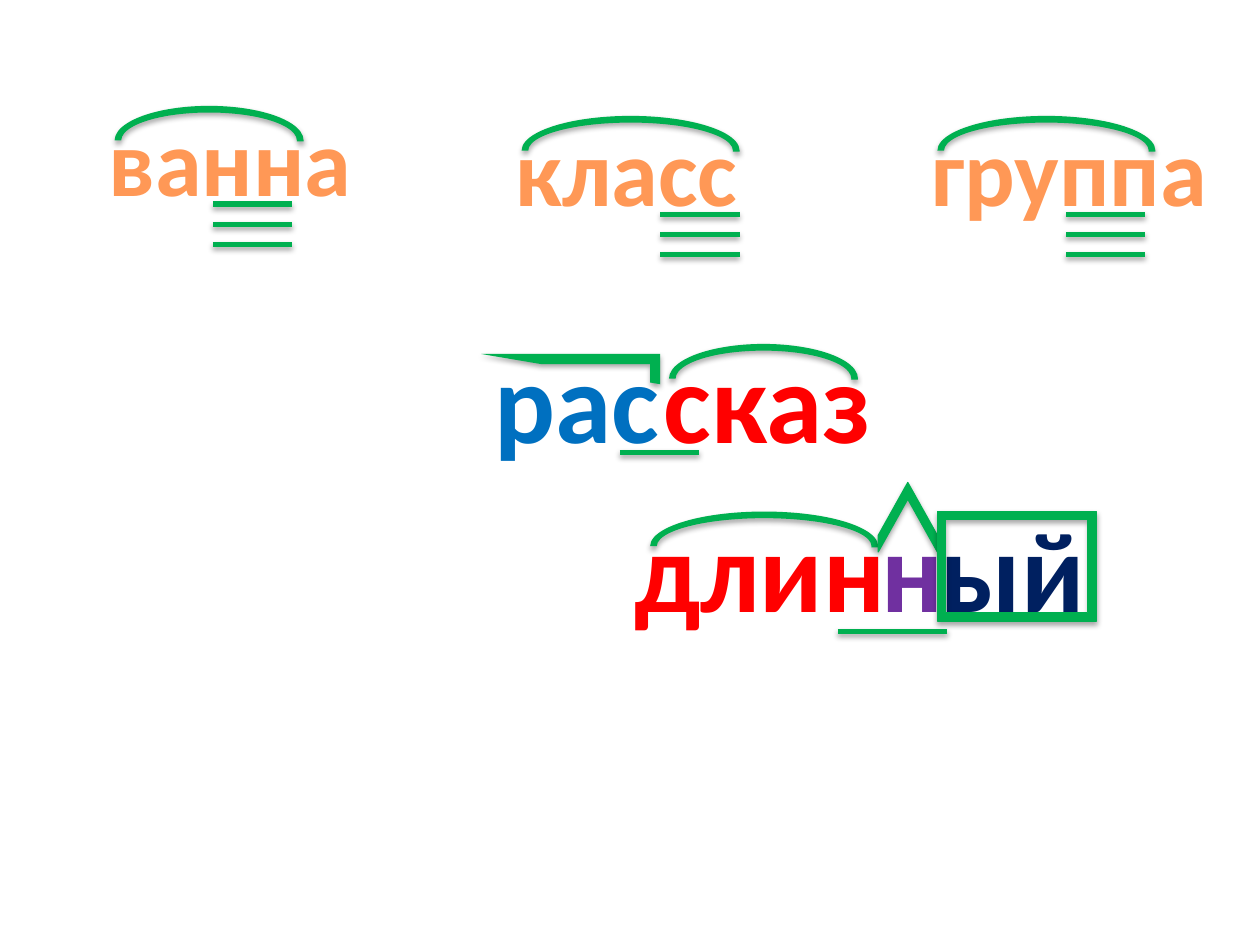
from copy import deepcopy
from dataclasses import dataclass

from lxml.etree import SubElement
from pptx import Presentation
from pptx.dml.color import RGBColor
from pptx.enum.shapes import MSO_CONNECTOR, MSO_SHAPE
from pptx.enum.text import MSO_AUTO_SIZE, PP_ALIGN
from pptx.oxml.ns import qn
from pptx.util import Inches, Pt


@dataclass(frozen=True)
class Theme:
    font: str = "Calibri"
    root_size: int = 54
    parts_size: int = 65
    mark: str = "00B050"
    prefix: str = "0070C0"
    root: str = "FF0000"
    suffix: str = "7030A0"
    ending: str = "002060"
    gradient: tuple = ((0, "9D4700"), (0.78, "FF9856"), (1, "FFF5F1"))
    underline_width: float = 3
    outline_width: float = 0.75


@dataclass(frozen=True)
class Box:
    left: float
    top: float
    width: float
    height: float

    def inner(self, left, top, width, height):
        return Box(self.left + left, self.top + top, width, height)

    def lengths(self):
        return [Inches(value) for value in (self.left, self.top, self.width, self.height)]


THEME = Theme()
ARC_HEIGHT = 0.55
ARC_ADJUSTMENTS = (108, 0.368, 0.096)
UNDERLINE_LENGTH = 0.63
UNDERLINE_STEP = 0.16


def add_shadow(shape):
    effects = SubElement(shape._element.spPr, qn("a:effectLst"))
    shadow = SubElement(effects, qn("a:outerShdw"), blurRad="40000", dist="23000",
                        dir="5400000", rotWithShape="0")
    color = SubElement(shadow, qn("a:srgbClr"), val="000000")
    SubElement(color, qn("a:alpha"), val="35000")


def fill_gradient(font):
    font.fill.gradient()
    font.fill.gradient_angle = 270
    stop_list = font._element.find(qn("a:gradFill")).find(qn("a:gsLst"))
    stop_list.append(deepcopy(stop_list[0]))
    for stop, (position, color) in zip(font.fill.gradient_stops, THEME.gradient):
        stop.position = position
        stop.color.rgb = RGBColor.from_string(color)


def add_word(slide, box, text, size, color=None):
    frame = slide.shapes.add_textbox(*box.lengths()).text_frame
    frame.word_wrap = False
    frame.auto_size = MSO_AUTO_SIZE.SHAPE_TO_FIT_TEXT
    paragraph = frame.paragraphs[0]
    paragraph.alignment = PP_ALIGN.CENTER
    run = paragraph.add_run()
    run.text = text
    for name, value in {"name": THEME.font, "size": Pt(size), "bold": True}.items():
        setattr(run.font, name, value)
    if color:
        run.font.color.rgb = RGBColor.from_string(color)
    else:
        fill_gradient(run.font)


def add_mark(slide, kind, box, adjustments=(), outlined=False, rotation=0, flipped=False):
    shape = slide.shapes.add_shape(kind, *box.lengths())
    for index, value in enumerate(adjustments):
        shape.adjustments[index] = value
    shape.rotation = rotation
    if flipped:
        shape._element.spPr.find(qn("a:xfrm")).set("flipH", "1")
    shape.fill.solid()
    shape.fill.fore_color.rgb = RGBColor.from_string(THEME.mark)
    if outlined:
        shape.line.color.rgb = RGBColor.from_string(THEME.mark)
        shape.line.width = Pt(THEME.outline_width)
    else:
        shape.line.fill.background()
    add_shadow(shape)


def add_root_arc(slide, box):
    add_mark(slide, MSO_SHAPE.BLOCK_ARC, box, ARC_ADJUSTMENTS)


def add_underline(shapes, left, top, length=UNDERLINE_LENGTH):
    line = shapes.add_connector(MSO_CONNECTOR.STRAIGHT, Inches(left), Inches(top),
                                Inches(left + length), Inches(top))
    line.line.color.rgb = RGBColor.from_string(THEME.mark)
    line.line.width = Pt(THEME.underline_width)
    add_shadow(line)


def add_root_word(slide, box, text, arc_width, underline_left):
    add_word(slide, box, text, THEME.root_size)
    add_root_arc(slide, box.inner(0.16, 0.08, arc_width, ARC_HEIGHT))
    group = slide.shapes.add_group_shape()
    for row in range(3):
        add_underline(group.shapes, box.left + underline_left,
                      box.top + 0.86 + row * UNDERLINE_STEP)


def add_prefix_word(slide, box):
    add_word(slide, box.inner(0, 0, 1.52, box.height), "рас", THEME.parts_size, THEME.prefix)
    add_word(slide, box.inner(1.34, 0, 1.86, box.height), "сказ", THEME.parts_size, THEME.root)
    add_root_arc(slide, box.inner(1.49, 0.16, 1.5, ARC_HEIGHT))
    add_mark(slide, MSO_SHAPE.HALF_FRAME, box.inner(0, 0.24, 1.42, 0.24), flipped=True)
    add_underline(slide.shapes, box.left + 1.1, box.top + 1.02)


def add_suffix_word(slide, box):
    parts = (
        ("длин", 0, 2.22, THEME.root),
        ("н", 1.97, 0.7, THEME.suffix),
        ("ый", 2.44, 1.36, THEME.ending),
    )
    for text, left, width, color in parts:
        add_word(slide, box.inner(left, 0, width, box.height), text, THEME.parts_size, color)
    add_root_arc(slide, box.inner(0.24, 0.15, 1.81, ARC_HEIGHT))
    add_mark(slide, MSO_SHAPE.CHEVRON, box.inner(2.01, -0.04, 0.55, 0.47), (0.894,),
             outlined=True, rotation=270)
    add_mark(slide, MSO_SHAPE.FRAME, box.inner(2.52, 0.15, 1.26, 0.87), (0.076,),
             outlined=True)
    add_underline(slide.shapes, box.left + 1.73, box.top + 1.1, 0.87)


def main():
    presentation = Presentation()
    presentation.slide_width, presentation.slide_height = Inches(10), Inches(7.5)
    slide = presentation.slides.add_slide(presentation.slide_layouts[6])
    root_words = (
        ("ванна", Box(0.75, 0.76, 2.15, 1.01), 1.5, 0.94),
        ("класс", Box(3.98, 0.84, 1.98, 1.01), 1.73, 1.26),
        ("группа", Box(7.28, 0.84, 2.41, 1.01), 1.73, 1.18),
    )
    for text, box, arc_width, underline_left in root_words:
        add_root_word(slide, box, text, arc_width, underline_left)
    add_prefix_word(slide, Box(3.82, 2.57, 3.2, 1.19))
    add_suffix_word(slide, Box(4.92, 3.91, 3.8, 1.19))
    presentation.save("out.pptx")


if __name__ == "__main__":
    main()
